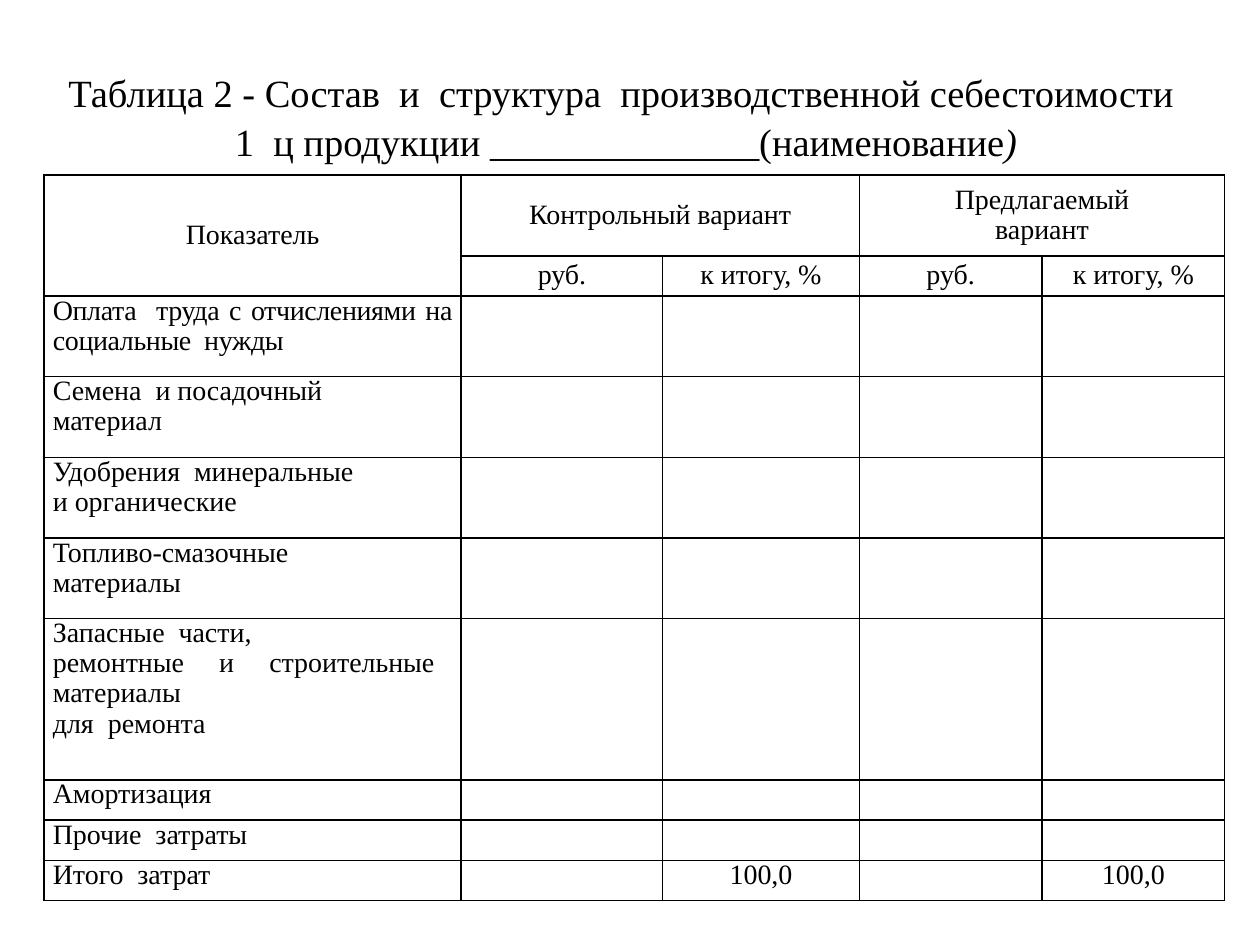
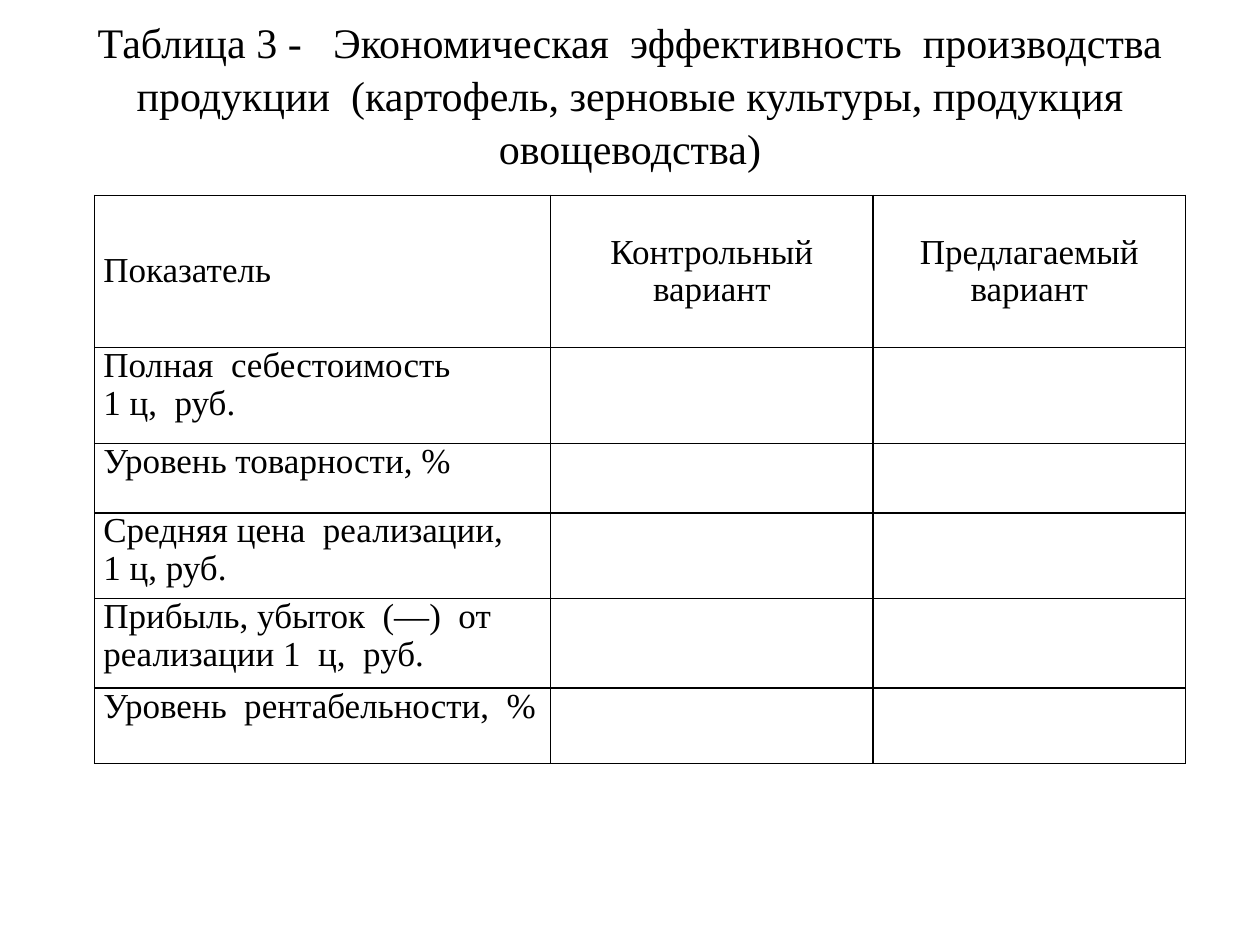
import pptx
import pptx.dml.color
import pptx.enum.text
import pptx.oxml
import pptx.oxml.ns
import pptx.util

Inches = pptx.util.Inches
Pt = pptx.util.Pt
ALIGN = pptx.enum.text.PP_ALIGN
ANCHOR = pptx.enum.text.MSO_ANCHOR

BLACK = pptx.dml.color.RGBColor(0, 0, 0)
WHITE = pptx.dml.color.RGBColor(255, 255, 255)
FONT = "Times New Roman"
TITLE_SPACING = 1.05
CELL_SPACING = 0.97
CELL_SIDE_MARGIN = 0.07

COST_HEADER = [
    ["Показатель", "Контрольный вариант", "", "Предлагаемый\nвариант", ""],
    ["", "руб.", "к итогу, %", "руб.", "к итогу, %"],
]
COST_ITEMS = [
    "Оплата  труда с отчислениями на социальные  нужды",
    "Семена  и посадочный\nматериал",
    "Удобрения  минеральные\nи органические",
    "Топливо-смазочные\nматериалы",
    "Запасные  части,\nремонтные  и  строительные  материалы\nдля  ремонта",
    "Амортизация",
    "Прочие  затраты",
]
COST_TOTAL = ["Итого  затрат", "", "100,0", "", "100,0"]
COST_MERGES = [((0, 0), (1, 0)), ((0, 1), (0, 2)), ((0, 3), (0, 4))]

EFFICIENCY_HEADER = ["Показатель", "Контрольный\nвариант", "Предлагаемый\nвариант"]
EFFICIENCY_ITEMS = [
    "Полная  себестоимость\n1 ц,  руб.",
    "Уровень товарности, %",
    "Средняя цена  реализации, \n1 ц, руб.",
    "Прибыль, убыток  (—)  от\nреализации 1  ц,  руб.",
    "Уровень  рентабельности,  %",
]


def add_run(paragraph, text, size, italic=None):
    run = paragraph.add_run()
    run.text = text
    run.font.name = FONT
    run.font.size = Pt(size)
    run.font.color.rgb = BLACK
    run.font.italic = italic
    return run


def add_titled_slide(presentation, left, top, size, lines, bottom_margin=0.05):
    """Add a title-only slide; the title's lines are joined by line breaks."""
    slide = presentation.slides.add_slide(presentation.slide_layouts[5])
    slide.background.fill.solid()
    slide.background.fill.fore_color.rgb = WHITE
    title = slide.shapes.title
    title.left, title.top = Inches(left), Inches(top)
    title.width, title.height = Inches(9), Inches(1.25)
    frame = title.text_frame
    frame.word_wrap = True
    frame.auto_size = pptx.enum.text.MSO_AUTO_SIZE.NONE
    frame.vertical_anchor = ANCHOR.MIDDLE
    frame.margin_bottom = Inches(bottom_margin)
    paragraph = frame.paragraphs[0]
    paragraph.alignment = ALIGN.CENTER
    paragraph.space_before, paragraph.space_after = Pt(12), Pt(6)
    paragraph.line_spacing = TITLE_SPACING
    for index, line in enumerate(lines):
        if index:
            paragraph.add_line_break()
        add_run(paragraph, line, size)
    return slide


def draw_borders(cell):
    properties = cell._tc.get_or_add_tcPr()
    for position, side in enumerate(("lnL", "lnR", "lnT", "lnB")):
        properties.insert(position, pptx.oxml.parse_xml(
            f'<a:{side} {pptx.oxml.ns.nsdecls("a")} w="{Pt(1)}">'
            f'<a:solidFill><a:srgbClr val="{BLACK}"/></a:solidFill></a:{side}>'))


def fill_cell(cell, text, size, alignment, anchor):
    """Write one paragraph for each line of text."""
    cell.margin_left = cell.margin_right = Inches(CELL_SIDE_MARGIN)
    cell.margin_top = cell.margin_bottom = 0
    cell.vertical_anchor = anchor
    cell.fill.background()
    draw_borders(cell)
    frame = cell.text_frame
    for index, line in enumerate(text.split("\n")):
        paragraph = frame.add_paragraph() if index else frame.paragraphs[0]
        paragraph.alignment = alignment
        paragraph.line_spacing = CELL_SPACING
        if line:
            add_run(paragraph, line, size)
        else:
            paragraph.font.size = Pt(size)


def add_grid(slide, left, top, widths, heights, rows, header_count, size):
    """Add a ruled table: centred header rows, justified first column."""
    table = slide.shapes.add_table(
        len(heights), len(widths), Inches(left), Inches(top),
        Inches(sum(widths)), Inches(sum(heights))).table
    table.first_row = table.horz_banding = False
    for column, width in zip(table.columns, widths):
        column.width = Inches(width)
    for row, height in zip(table.rows, heights):
        row.height = Inches(height)
    for row_index, row in enumerate(rows):
        anchor = ANCHOR.MIDDLE if row_index < header_count else ANCHOR.TOP
        for column_index, text in enumerate(row):
            alignment = ALIGN.CENTER if column_index else ALIGN.JUSTIFY
            fill_cell(table.cell(row_index, column_index), text, size, alignment, anchor)
    return table


def add_cost_slide(presentation):
    slide = add_titled_slide(presentation, 0.43, 0.29, 22, [
        "Таблица 2 - Состав  и  структура  производственной себестоимости  "
        "1  ц продукции ______________(наименование"])
    add_run(slide.shapes.title.text_frame.paragraphs[0], ")", 22, italic=True)
    rows = COST_HEADER + [[item, "", "", "", ""] for item in COST_ITEMS] + [COST_TOTAL]
    table = add_grid(
        slide, 0.35, 1.39, [3.31, 1.6, 1.56, 1.45, 1.45],
        [0.64, 0.32] + [0.64] * 4 + [1.28] + [0.32] * 3,
        rows, len(COST_HEADER), 16)
    for first, last in COST_MERGES:
        table.cell(*first).merge(table.cell(*last))
    table.cell(0, 0).text_frame.paragraphs[0].alignment = ALIGN.CENTER
    labour_run = table.cell(2, 0).text_frame.paragraphs[0].runs[0]
    labour_run.font._element.set("spc", "-20")


def add_efficiency_slide(presentation):
    slide = add_titled_slide(presentation, 0.5, 0.3, 24, [
        "Таблица 3 -   Экономическая  эффективность  производства",
        "продукции  (картофель, зерновые культуры, продукция овощеводства)",
    ], bottom_margin=0.42)
    rows = [EFFICIENCY_HEADER] + [[item, "", ""] for item in EFFICIENCY_ITEMS]
    add_grid(slide, 0.75, 1.55, [3.62, 2.56, 2.48],
             [1.21, 0.76, 0.55, 0.68, 0.71, 0.6], rows, 1, 20)


def main():
    presentation = pptx.Presentation()
    presentation.slide_width = Inches(10)
    presentation.slide_height = Inches(7.5)
    add_cost_slide(presentation)
    add_efficiency_slide(presentation)
    presentation.save("out.pptx")


if __name__ == "__main__":
    main()
